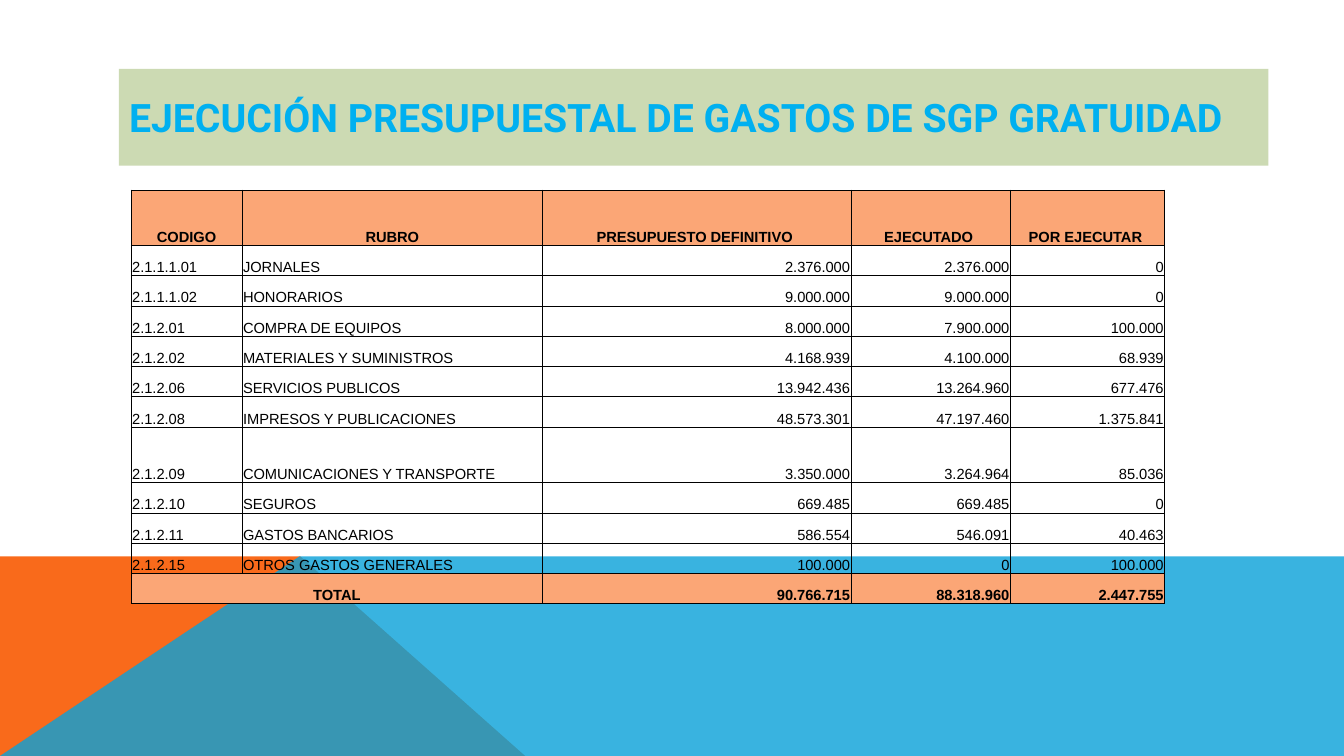
from dataclasses import dataclass

from lxml.etree import SubElement
from pptx import Presentation
from pptx.dml.color import RGBColor
from pptx.enum.text import MSO_ANCHOR, MSO_AUTO_SIZE, PP_ALIGN
from pptx.oxml import parse_xml
from pptx.oxml.ns import nsdecls, qn
from pptx.util import Inches, Pt


@dataclass(frozen=True)
class Theme:
    orange: str = "F96A1B"
    blue: str = "08A1D9"
    title_band: str = "CCDAB3"
    title_text: str = "00B0F0"
    title_outline: str = "727477"
    highlight: str = "FBA676"
    ink: str = "000000"
    title_font: str = "Roboto"
    table_font: str = "Arial"
    title_size: float = 28
    table_size: float = 10.5
    border_width: float = 0.5
    outline_width: float = 0.83


THEME = Theme()
WIDTH, HEIGHT = Inches(13.33), Inches(7.5)
HORIZON = 73.6
HEADERS = ["CODIGO", "RUBRO", "PRESUPUESTO DEFINITIVO ", "EJECUTADO ", "POR EJECUTAR "]
EXPENSES = [
    ("2.1.1.1.01", "JORNALES", 2376000, 2376000),
    ("2.1.1.1.02", "HONORARIOS", 9000000, 9000000),
    ("2.1.2.01", "COMPRA DE EQUIPOS", 8000000, 7900000),
    ("2.1.2.02", "MATERIALES Y SUMINISTROS", 4168939, 4100000),
    ("2.1.2.06", "SERVICIOS PUBLICOS", 13942436, 13264960),
    ("2.1.2.08", "IMPRESOS Y PUBLICACIONES", 48573301, 47197460),
    ("2.1.2.09", "COMUNICACIONES Y TRANSPORTE", 3350000, 3264964),
    ("2.1.2.10", "SEGUROS", 669485, 669485),
    ("2.1.2.11", "GASTOS BANCARIOS", 586554, 546091),
    ("2.1.2.15", "OTROS GASTOS GENERALES", 100000, 0),
]
COLUMN_SHARES = [1.1, 2.98, 3.06, 1.58, 1.53]
TALL_ROWS = (0, 7)


def across(percent):
    return round(WIDTH * percent / 100)


def down(percent):
    return round(HEIGHT * percent / 100)


def color(code):
    return RGBColor.from_string(code)


def write(frame, text, *, font, size, ink, bold=False, align=PP_ALIGN.LEFT):
    paragraph = frame.paragraphs[0]
    paragraph.alignment = align
    run = paragraph.add_run()
    run.text = text
    run.font.name = font
    run.font.size = Pt(size)
    run.font.bold = bold
    run.font.color.rgb = color(ink)
    return run


def line_xml(tag, code, width):
    return parse_xml(
        f'<a:{tag} {nsdecls("a")} w="{Pt(width)}"><a:solidFill>'
        f'<a:srgbClr val="{code}"/></a:solidFill></a:{tag}>'
    )


def add_ground(slide, corners, fill, opacity=100):
    points = [(across(x), down(y)) for x, y in corners]
    builder = slide.shapes.build_freeform(*points[0])
    builder.add_line_segments(points[1:], close=True)
    ground = builder.convert_to_shape()
    ground.shadow.inherit = False
    ground.fill.solid()
    ground.fill.fore_color.rgb = color(fill)
    ground.line.fill.background()
    if opacity < 100:
        tint = ground.fill._xPr.find(f".//{qn('a:srgbClr')}")
        SubElement(tint, qn("a:alpha")).set("val", str(opacity * 1000))


def add_title(slide, text):
    title = slide.shapes.title
    title.left, title.top = across(8.85), down(9.1)
    title.width, title.height = across(85.52), down(12.8)
    title.fill.solid()
    title.fill.fore_color.rgb = color(THEME.title_band)
    frame = title.text_frame
    frame.word_wrap = True
    frame.auto_size = MSO_AUTO_SIZE.NONE
    frame.vertical_anchor = MSO_ANCHOR.MIDDLE
    run = write(frame, text, font=THEME.title_font, size=THEME.title_size,
                ink=THEME.title_text, bold=True)
    outline = line_xml("ln", THEME.title_outline, THEME.outline_width)
    run.font._element.insert(0, outline)


def format_cell(cell, highlighted):
    cell.vertical_anchor = MSO_ANCHOR.BOTTOM
    cell.margin_left = cell.margin_top = cell.margin_right = Inches(0.01)
    cell.margin_bottom = 0
    if highlighted:
        cell.fill.solid()
        cell.fill.fore_color.rgb = color(THEME.highlight)
    else:
        cell.fill.background()
    properties = cell._tc.get_or_add_tcPr()
    for position, side in enumerate(("lnL", "lnR", "lnT", "lnB")):
        properties.insert(position, line_xml(side, THEME.ink, THEME.border_width))


def amount(value):
    return f"{value:,}".replace(",", ".")


def budget_rows():
    planned = sum(expense[2] for expense in EXPENSES)
    spent = sum(expense[3] for expense in EXPENSES)
    rows = [HEADERS]
    for code, item, budget, used in [*EXPENSES, ("TOTAL", "", planned, spent)]:
        rows.append([code, item, *map(amount, (budget, used, budget - used))])
    return rows


def add_budget(slide):
    rows = budget_rows()
    last = len(rows) - 1
    width, height = across(76.9), down(54.75)
    budget = slide.shapes.add_table(
        len(rows), len(HEADERS), across(9.76), down(25.12), width, height
    ).table
    budget.first_row = budget.horz_banding = False
    for column, share in zip(budget.columns, COLUMN_SHARES):
        column.width = round(width * share / sum(COLUMN_SHARES))
    row_shares = [0.55 if index in TALL_ROWS else 0.3 for index in range(len(rows))]
    for row, share in zip(budget.rows, row_shares):
        row.height = round(height * share / sum(row_shares))
    budget.cell(last, 0).merge(budget.cell(last, 1))
    for r, values in enumerate(rows):
        highlighted = r in (0, last)
        for c, value in enumerate(values):
            cell = budget.cell(r, c)
            format_cell(cell, highlighted)
            if cell.is_spanned:
                continue
            if r == 0 or cell.is_merge_origin:
                align = PP_ALIGN.CENTER
            else:
                align = PP_ALIGN.LEFT if c < 2 else PP_ALIGN.RIGHT
            write(cell.text_frame, value, font=THEME.table_font, size=THEME.table_size,
                  ink=THEME.ink, bold=highlighted, align=align)


def main():
    deck = Presentation()
    deck.slide_width, deck.slide_height = WIDTH, HEIGHT
    slide = deck.slides.add_slide(deck.slide_layouts[5])
    add_ground(slide, [(0, 100), (0, HORIZON), (22.35, HORIZON), (39.08, 100)],
               THEME.orange)
    add_ground(slide, [(0, 100), (22.28, HORIZON), (100, HORIZON), (100, 100)],
               THEME.blue, opacity=80)
    add_title(slide, "EJECUCIÓN PRESUPUESTAL DE GASTOS DE SGP GRATUIDAD")
    add_budget(slide)
    deck.save("out.pptx")


if __name__ == "__main__":
    main()
